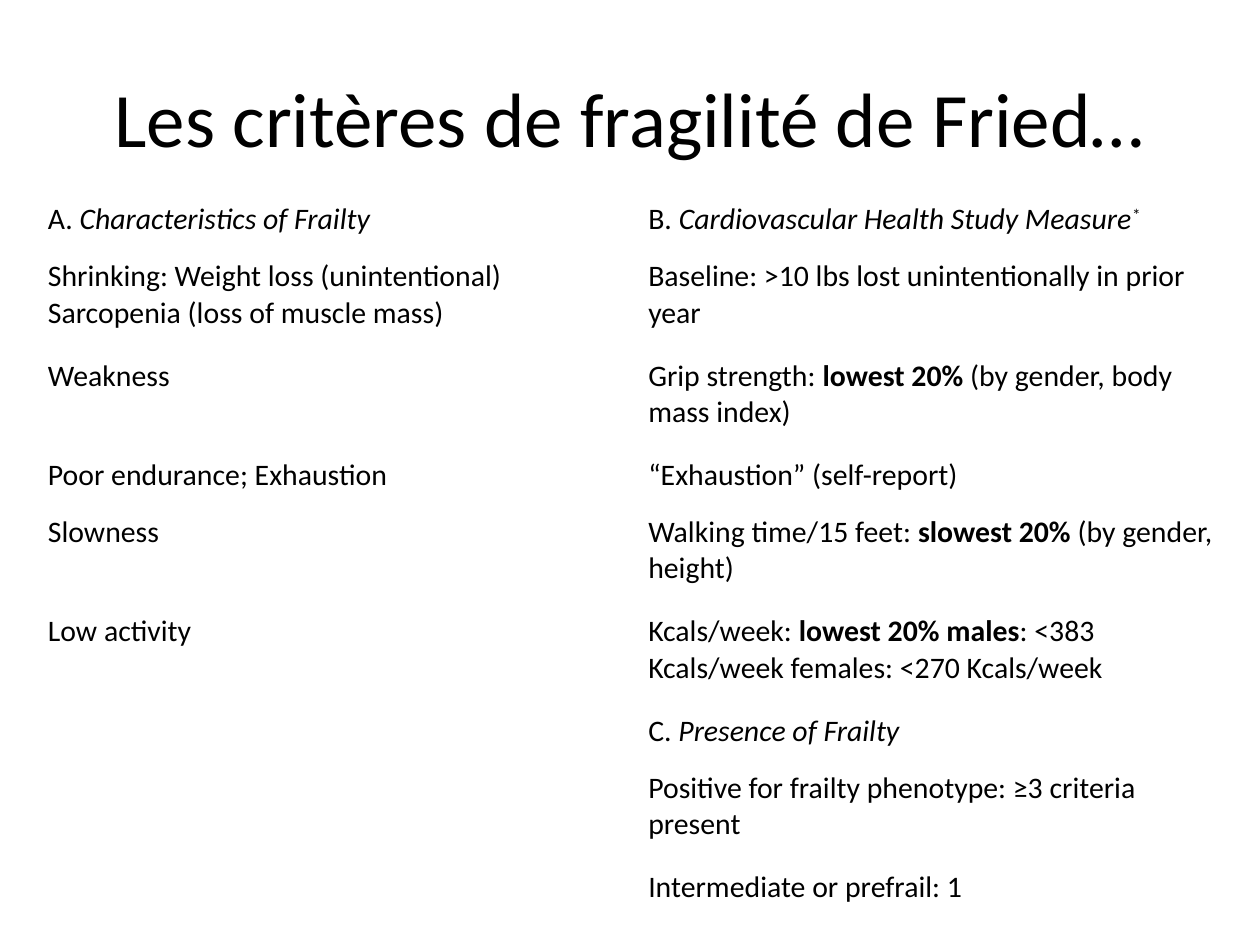
from dataclasses import dataclass

import pptx
import pptx.dml.color
import pptx.enum.text
import pptx.util

Inches = pptx.util.Inches
Pt = pptx.util.Pt


@dataclass(frozen=True)
class Theme:
    """Font, colours and type sizes of the slide."""
    font: str = "Calibri"
    ink: pptx.dml.color.RGBColor = pptx.dml.color.RGBColor(0, 0, 0)
    title: int = 44
    body: int = 17


THEME = Theme()
TITLE = "Les critères de fragilité de Fried…"
SHORT, TALL = 0.45, 0.79
CRITERIA = [
    (SHORT, [("A. ", ""), ("Characteristics of Frailty", "italic")],
     [("B. ", ""), ("Cardiovascular Health Study Measure", "italic"), ("*", "super")]),
    (TALL, [("Shrinking: Weight loss (unintentional) Sarcopenia (loss of muscle mass)", "")],
     [("Baseline: >10 lbs lost unintentionally in prior year", "")]),
    (TALL, [("Weakness", "")],
     [("Grip strength: ", ""), ("lowest 20% ", "bold"), ("(by gender, body mass index)", "")]),
    (SHORT, [("Poor endurance; Exhaustion", "")], [("“Exhaustion” (self-report)", "")]),
    (TALL, [("Slowness", "")],
     [("Walking time/15 feet: ", ""), ("slowest 20% ", "bold"), ("(by gender, height)", "")]),
    (TALL, [("Low activity", "")],
     [("Kcals/week: ", ""), ("lowest 20% males", "bold"),
      (": <383 Kcals/week females: <270 Kcals/week", "")]),
    (SHORT, [], [("C. ", ""), ("Presence of Frailty", "italic")]),
    (TALL, [], [("Positive for frailty phenotype: ≥3 criteria present", "")]),
    (SHORT, [], [("Intermediate or prefrail: 1", "")]),
]


def add_run(p, text, size, style=""):
    """Append one run in the theme font with an optional style."""
    r = p.add_run()
    r.text = text
    r.font.name = THEME.font
    r.font.size = Pt(size)
    r.font.color.rgb = THEME.ink
    r.font.bold = style == "bold"
    r.font.italic = style == "italic"
    if style == "super":
        r.font._element.set("baseline", "30000")


def place_title(s, left, top, width, height):
    """Move the title placeholder into its box and write the heading."""
    sp = s.shapes.title
    sp.left, sp.top, sp.width, sp.height = map(Inches, (left, top, width, height))
    tf = sp.text_frame
    tf.word_wrap = True
    tf.vertical_anchor = pptx.enum.text.MSO_ANCHOR.MIDDLE
    p = tf.paragraphs[0]
    p.alignment = pptx.enum.text.PP_ALIGN.CENTER
    add_run(p, TITLE, THEME.title)


def place_criteria(s, left, top, width):
    """Build the unfilled two-column table of criteria and measures."""
    height = sum(row[0] for row in CRITERIA)
    box = map(Inches, (left, top, width, height))
    table = s.shapes.add_table(len(CRITERIA), 2, *box).table
    table.first_row = table.horz_banding = False
    for row, (row_height, *texts) in zip(table.rows, CRITERIA):
        row.height = Inches(row_height)
        for cell, runs in zip(row.cells, texts):
            cell.fill.background()
            p = cell.text_frame.paragraphs[0]
            p.font.size = Pt(THEME.body)
            for text, style in runs:
                add_run(p, text, THEME.body, style)


def main():
    """Create the slide and save the presentation."""
    prs = pptx.Presentation()
    prs.slide_width, prs.slide_height = Inches(10), Inches(7.5)
    s = prs.slides.add_slide(prs.slide_layouts[5])
    place_title(s, 0.5, 0.3, 9, 1.25)
    place_criteria(s, 0.28, 1.55, 9.53)
    prs.save("out.pptx")


if __name__ == "__main__":
    main()
